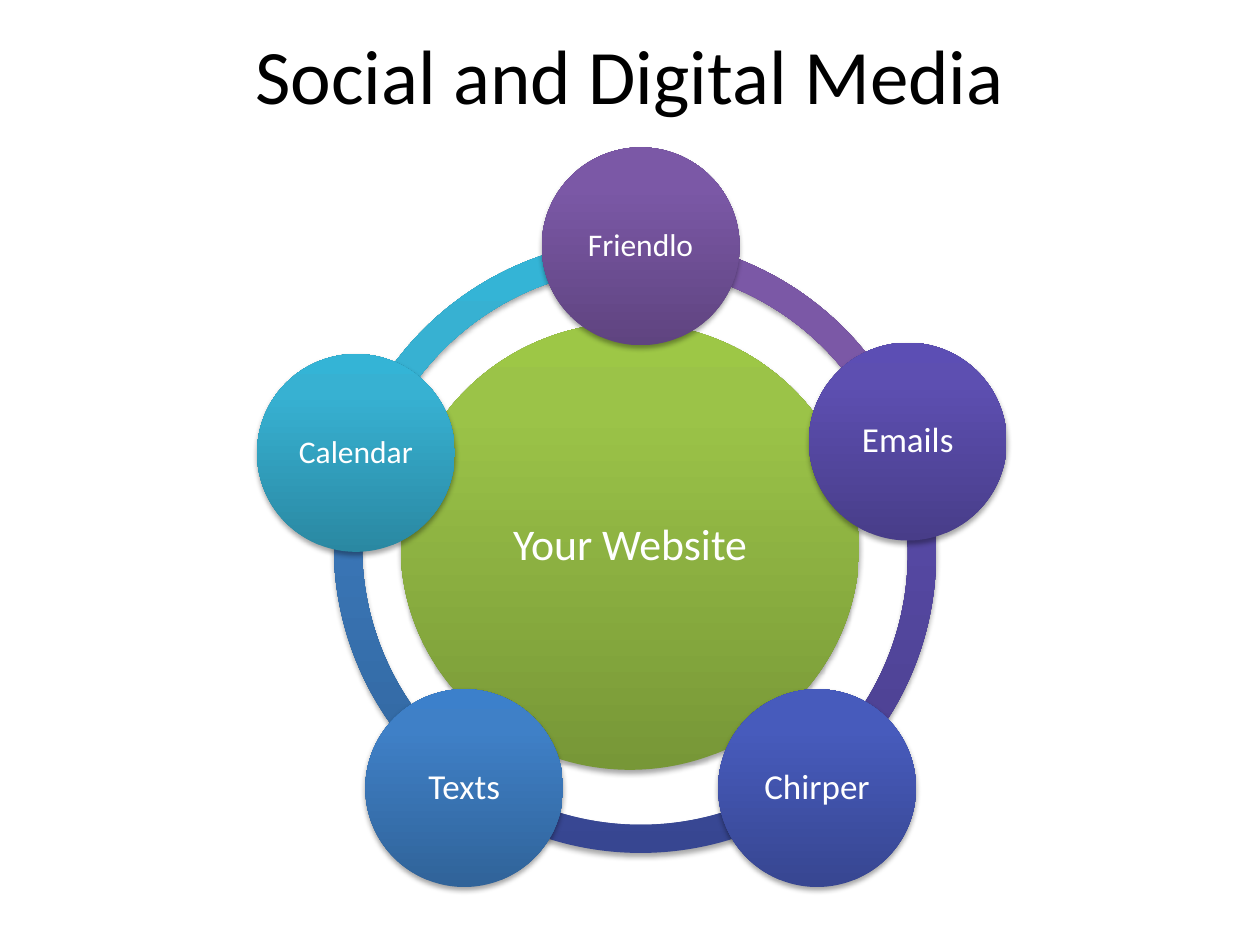
from typing import NamedTuple

from lxml.etree import SubElement
from pptx import Presentation
from pptx.dml.color import RGBColor
from pptx.enum.shapes import MSO_SHAPE as Preset
from pptx.enum.text import MSO_ANCHOR as Anchor, PP_ALIGN as Align
from pptx.oxml.ns import qn
from pptx.util import Inches, Pt

COLUMNS, ROWS = 10, 7.5
CELL = Inches(1)
FONT = "Calibri"
BLACK = RGBColor(0x00, 0x00, 0x00)
WHITE = RGBColor(0xFF, 0xFF, 0xFF)

CIRCLE = 1.57
RING = 4.87
RING_THICKNESS = 0.046


class Shades(NamedTuple):
    """Gradient colours from the bottom edge to the top."""
    bottom: RGBColor
    middle: RGBColor
    top: RGBColor


def shades(*codes: str) -> Shades:
    return Shades(*map(RGBColor.from_string, codes))


GREEN = shades("779737", "9BC348", "9DC746")
PURPLE = shades("5F4480", "7B58A6", "7C57A8")
VIOLET = shades("483D89", "5D4FB1", "5C4EB4")
INDIGO = shades("374691", "475BBC", "455ABF")
BLUE = shades("306399", "3F80C7", "3C80CB")
TEAL = shades("2A88A2", "37B1D2", "34B4D6")


class Area(NamedTuple):
    """Left, top, width and height in grid columns and rows."""
    left: float
    top: float
    width: float
    height: float


class Arc(NamedTuple):
    """Ring segment: its place in the grid and clockwise degrees."""
    left: float
    top: float
    start: float
    end: float


class Channel(NamedTuple):
    name: str
    text_size: int
    left: float
    top: float
    colours: Shades
    arc: Arc


CHANNELS = [
    Channel("Friendlo", 18, 4.3, 1.17, PURPLE, Arc(2.54, 1.89, 272.65, 339.81)),
    Channel("Emails", 20, 6.42, 2.72, VIOLET, Arc(2.56, 1.96, 338.09, 51.45)),
    Channel("Chirper", 20, 5.7, 5.47, INDIGO, Arc(2.65, 1.9, 54, 126)),
    Channel("Texts", 20, 2.9, 5.47, BLUE, Arc(2.65, 1.9, 126, 198)),
    Channel("Calendar", 18, 2.04, 2.81, TEAL, Arc(2.65, 1.9, 198, 270)),
]


def place(shape, area: Area) -> None:
    shape.left, shape.top, shape.width, shape.height = (
        round(length * CELL) for length in area)


def add_colour(parent, colour: RGBColor):
    return SubElement(parent, qn("a:srgbClr"), val=str(colour))


def add_gradient(shape, colours: Shades) -> None:
    shape.fill.gradient()
    shape.fill.gradient_angle = 90
    stops = shape._element.spPr.find(qn("a:gradFill")).find(qn("a:gsLst"))
    for stop in list(stops):
        stops.remove(stop)
    for percent, colour in zip((0, 80, 100), colours):
        add_colour(SubElement(stops, qn("a:gs"), pos=str(percent * 1000)), colour)


def add_shadow(shape) -> None:
    shape.shadow.inherit = False
    effects = shape._element.spPr.find(qn("a:effectLst"))
    shadow = SubElement(effects, qn("a:outerShdw"), blurRad=str(Pt(3.1)),
                        dist=str(Pt(1.8)), dir="5400000", rotWithShape="0")
    SubElement(add_colour(shadow, BLACK), qn("a:alpha"), val="35000")


def add_shaded_shape(page, preset: Preset, area: Area, colours: Shades):
    shape = page.shapes.add_shape(preset, 0, 0, CELL, CELL)
    place(shape, area)
    add_gradient(shape, colours)
    shape.line.fill.background()
    add_shadow(shape)
    return shape


def write(box, text: str, size: int, colour: RGBColor) -> None:
    frame = box.text_frame
    frame.word_wrap = True
    frame.vertical_anchor = Anchor.MIDDLE
    para = frame.paragraphs[0]
    para.alignment = Align.CENTER
    span = para.add_run()
    span.text = text
    span.font.name = FONT
    span.font.size = Pt(size)
    span.font.color.rgb = colour


def add_arc(page, arc: Arc, colours: Shades) -> None:
    area = Area(arc.left, arc.top, RING, RING)
    shape = add_shaded_shape(page, Preset.BLOCK_ARC, area, colours)
    # One degree is 60000 units; adjustments count in 100000 units.
    for index, value in enumerate((arc.start * 0.6, arc.end * 0.6, RING_THICKNESS)):
        shape.adjustments[index] = value


def add_circle(page, area: Area, colours: Shades, text: str, size: int) -> None:
    circle = add_shaded_shape(page, Preset.OVAL, area, colours)
    write(circle, text, size, WHITE)
    frame = circle.text_frame
    frame.margin_left = frame.margin_right = Inches(0.03)
    frame.margin_top = frame.margin_bottom = Inches(0.03)
    frame.paragraphs[0].line_spacing = 0.9


def main() -> None:
    deck = Presentation()
    deck.slide_width, deck.slide_height = round(COLUMNS * CELL), round(ROWS * CELL)
    page = deck.slides.add_slide(deck.slide_layouts[5])

    title = page.shapes.title
    place(title, Area(0.5, 0.17, 9, 0.83))
    write(title, "Social and Digital Media", 44, BLACK)

    for channel in reversed(CHANNELS):
        add_arc(page, channel.arc, channel.colours)
    add_circle(page, Area(3.18, 2.56, 3.64, 3.55), GREEN, "Your Website", 25)
    for channel in CHANNELS:
        area = Area(channel.left, channel.top, CIRCLE, CIRCLE)
        add_circle(page, area, channel.colours, channel.name, channel.text_size)

    deck.save("out.pptx")


if __name__ == "__main__":
    main()
